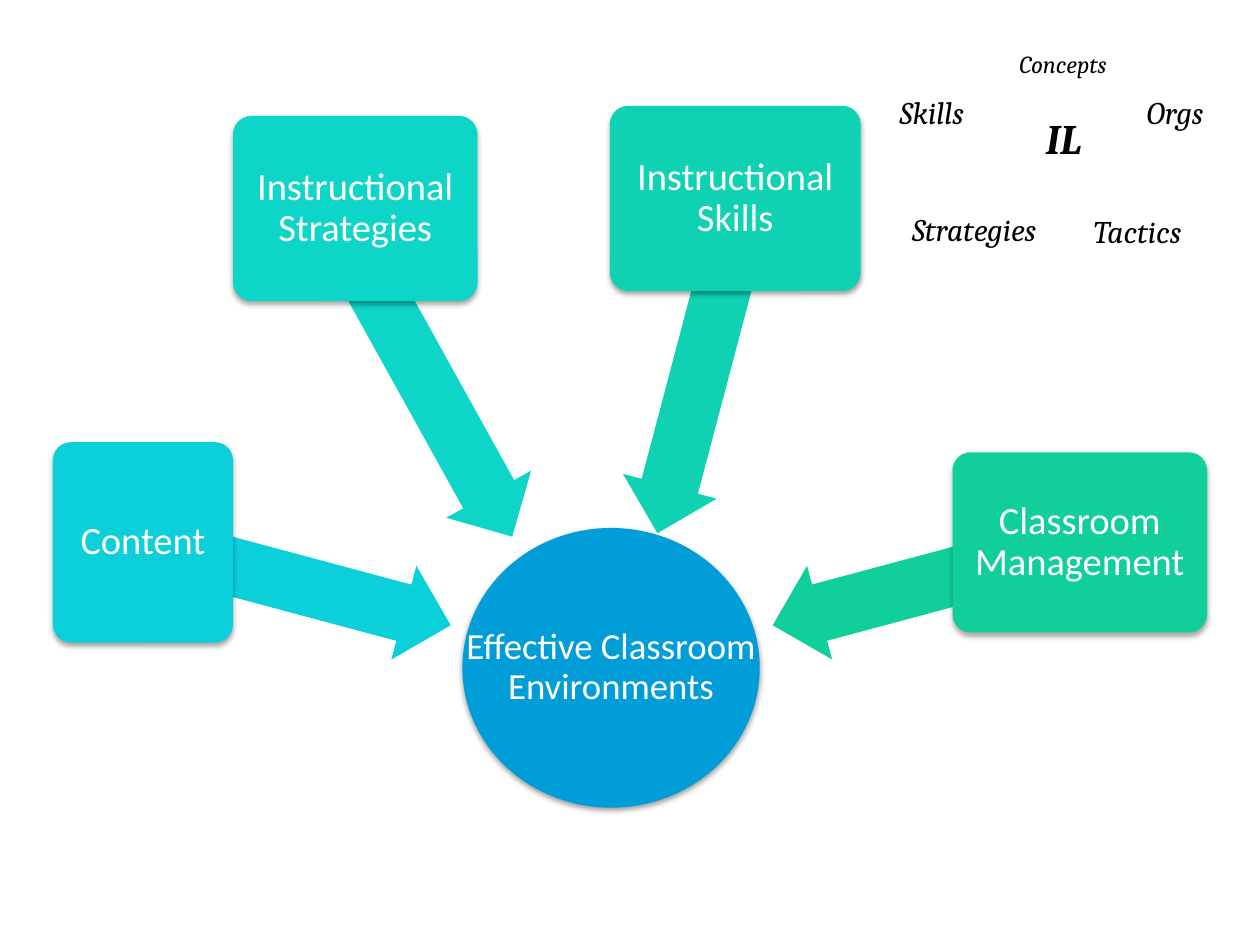
from lxml import etree
from pptx import Presentation
from pptx.dml.color import RGBColor
from pptx.enum.shapes import MSO_SHAPE
from pptx.enum.text import MSO_ANCHOR, PP_ALIGN
from pptx.oxml.ns import qn
from pptx.util import Inches, Pt

ELLIPSE = MSO_SHAPE.OVAL
ROUNDED = MSO_SHAPE.ROUNDED_RECTANGLE
LEFT_ARROW = MSO_SHAPE.LEFT_ARROW
CENTER = PP_ALIGN.CENTER
MIDDLE = MSO_ANCHOR.MIDDLE


def color(hex_value):
    return RGBColor.from_string(hex_value)


class Diagram:
    body_font = "Calibri"
    word_font = "Cambria"
    light = "FFFFFF"
    dark = "000000"

    def __init__(self, slide):
        self.slide = slide

    def block(self, kind, box, fill, adjustments=()):
        block = self.slide.shapes.add_shape(kind, *map(Inches, box))
        block.shadow.inherit = False
        block.fill.solid()
        block.fill.fore_color.rgb = color(fill)
        block.line.fill.background()
        for index, value in enumerate(adjustments):
            block.adjustments[index] = value
        return block

    def soft_shadow(self, block, opacity, distance):
        effects = block._element.spPr.find(qn("a:effectLst"))
        shadow = etree.SubElement(
            effects, qn("a:outerShdw"), blurRad=str(Pt(3.1)), dist=str(Pt(distance)),
            dir="5400000", rotWithShape="0")
        tint = etree.SubElement(shadow, qn("a:srgbClr"), val=self.dark)
        etree.SubElement(tint, qn("a:alpha"), val=str(opacity * 1000))

    def centered_text(self, holder, text, size):
        frame = holder.text_frame
        frame.word_wrap = True
        frame.vertical_anchor = MIDDLE
        frame.margin_left = frame.margin_right = Inches(0.01)
        frame.margin_top = frame.margin_bottom = Inches(0.01)
        paragraph = frame.paragraphs[0]
        paragraph.alignment = CENTER
        paragraph.line_spacing = 0.9
        self.run(paragraph, text, size, self.body_font, self.light)

    def run(self, paragraph, text, size, font, text_color, bold=False, italic=False):
        run = paragraph.add_run()
        run.text = text
        run.font.name = font
        run.font.size = Pt(size)
        run.font.bold = bold
        run.font.italic = italic
        run.font.color.rgb = color(text_color)

    def hub(self, text, box, fill):
        circle = self.block(ELLIPSE, box, fill)
        self.soft_shadow(circle, 38, 1.6)
        # The label is wider than the text area of an ellipse
        label = self.slide.shapes.add_textbox(*map(Inches, box))
        self.centered_text(label, text, 21)

    def arrow(self, box, angle, fill):
        self.block(LEFT_ARROW, box, fill, (0.6, 0.5)).rotation = angle

    def card(self, text, box, fill):
        card = self.block(ROUNDED, box, fill, (0.1,))
        self.soft_shadow(card, 35, 1.8)
        self.centered_text(card, text, 22)

    def word(self, text, box, indent, size=18, bold=False):
        label = self.slide.shapes.add_textbox(*map(Inches, box))
        frame = label.text_frame
        frame.word_wrap = True
        frame.margin_left = Inches(0.1 + indent)
        frame.margin_right = 0
        self.run(frame.paragraphs[0], text, size, self.word_font, self.dark, bold, True)


def main():
    presentation = Presentation()
    presentation.slide_width = Inches(10)
    presentation.slide_height = Inches(7.5)
    diagram = Diagram(presentation.slides.add_slide(presentation.slide_layouts[6]))

    # Word cluster in the corner
    diagram.word("IL", (7.93, 0.84, 0.94, 0.5), 0.27, 24, True)
    for text, left, top, indent, size in (
        ("Strategies", 7.14, 1.62, 0, 18),
        ("Tactics", 8.31, 1.63, 0.27, 18),
        ("Skills", 6.77, 0.69, 0.27, 18),
        ("Orgs", 8.51, 0.69, 0.49, 18),
        ("Concepts", 7.72, 0.34, 0.27, 14),
    ):
        diagram.word(text, (left, top, min(1.57, 10 - left), 0.4), indent, size)

    # Central goal
    diagram.hub("Effective Classroom Environments", (3.67, 4.19, 2.36, 2.22), "009DD9")

    # Contributing factors, each with its arrow to the goal
    for text, card, arrow, angle, fill in (
        ("Content", (0.42, 3.51, 1.43, 1.59), (1.09, 4.25, 2.53), 195, "0BD0D9"),
        ("Instructional Strategies", (1.85, 0.92, 1.94, 1.47), (1.92, 2.61, 2.89), 241, "0DD6C9"),
        ("Instructional Skills", (4.84, 0.84, 1.99, 1.47), (4.25, 2.59, 2.6), 284.8, "0ED2B2"),
        ("Classroom Management", (7.56, 3.59, 2.02, 1.43), (6.09, 4.25, 2.53), 345, "10CF9B"),
    ):
        diagram.arrow((*arrow, 0.77), angle, fill)
        diagram.card(text, card, fill)

    presentation.save("out.pptx")


if __name__ == "__main__":
    main()
